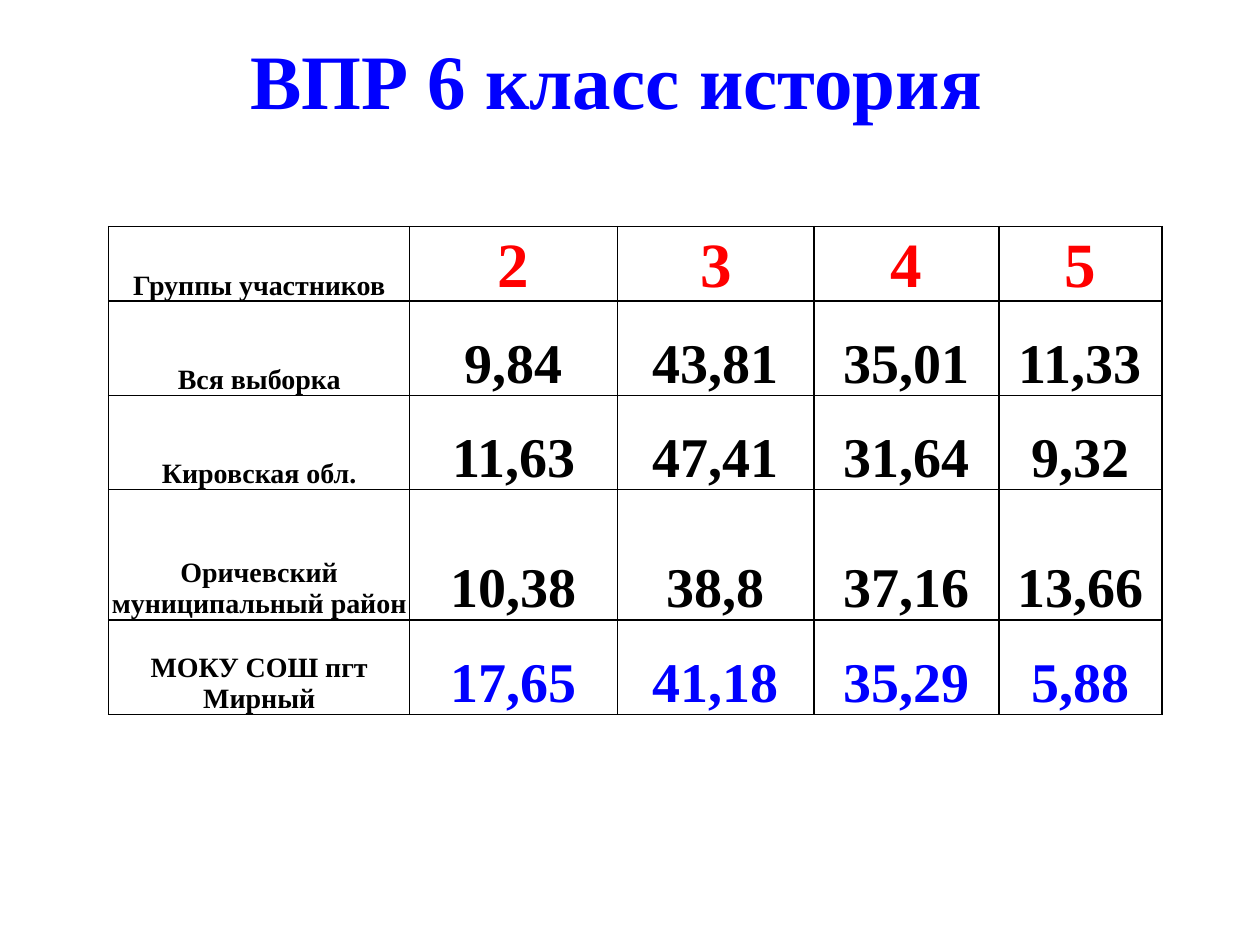
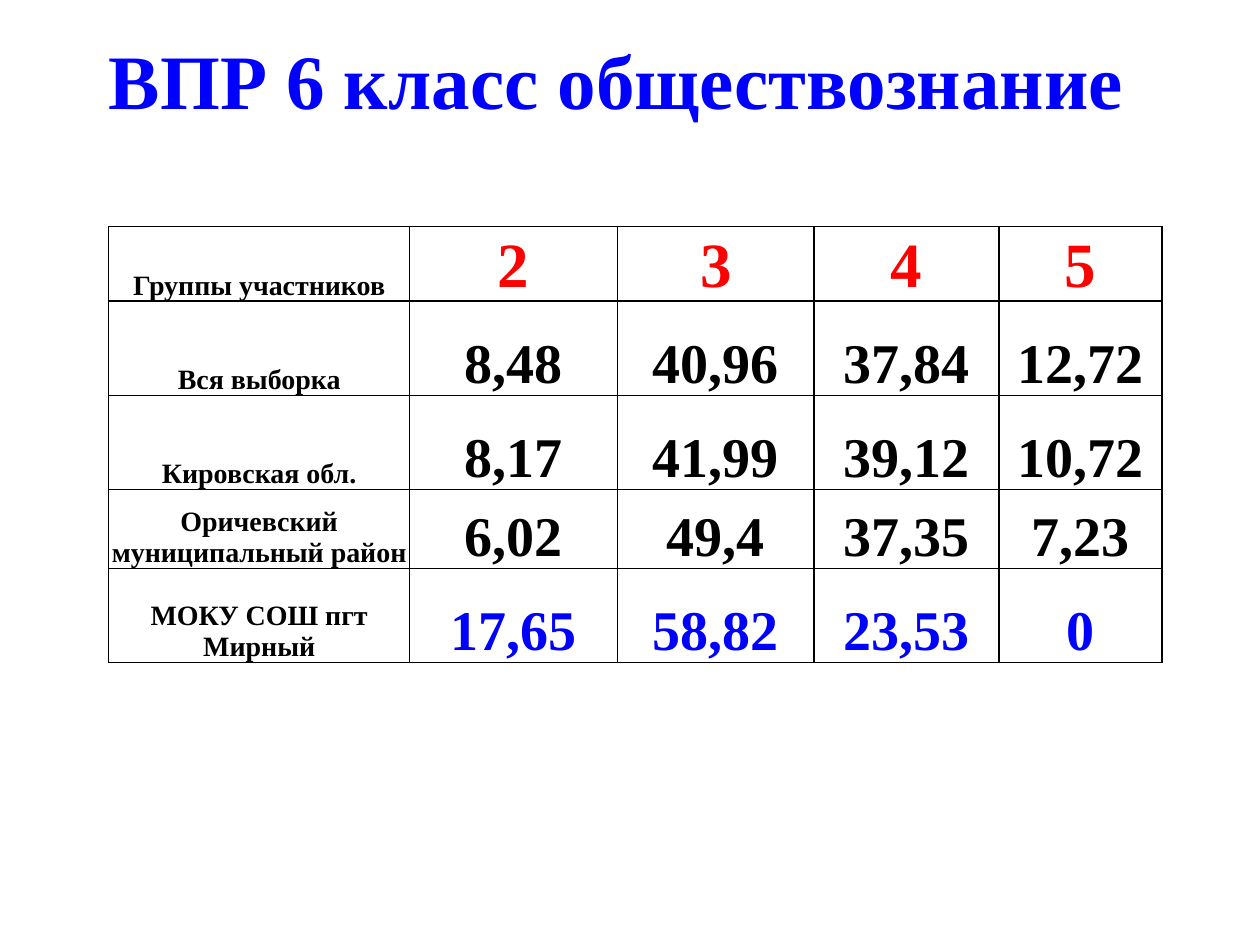
from lxml.etree import SubElement
from pptx import Presentation
from pptx.dml.color import RGBColor
from pptx.enum.text import MSO_ANCHOR, PP_ALIGN
from pptx.oxml.ns import qn
from pptx.util import Cm, Pt

FONT = "Times New Roman"
BLUE, RED, BLACK = "0000FF", "FF0000", "000000"
TITLE_SIZE, LABEL_SIZE, MARK_SIZE, VALUE_SIZE = 44, 16, 36, 32

COL_WIDTHS = [6.07, 4.19, 3.96, 3.73, 3.28]
HEADER_HEIGHT, ROW_HEIGHT = 1.5, 1.9
DISTRICT_ROW = 3
HEADER = ["Группы участников", "2", "3", "4", "5"]
GROUPS = ["Вся выборка", "Кировская обл.",
          "Оричевский муниципальный район", "МОКУ СОШ пгт Мирный"]

# Title, height of the district row, percentages by group
SUBJECTS = [
    ("ВПР 6 класс история", 2.63, [
        ["9,84", "43,81", "35,01", "11,33"],
        ["11,63", "47,41", "31,64", "9,32"],
        ["10,38", "38,8", "37,16", "13,66"],
        ["17,65", "41,18", "35,29", "5,88"],
    ]),
    ("ВПР 6 класс обществознание", 1.59, [
        ["8,48", "40,96", "37,84", "12,72"],
        ["8,17", "41,99", "39,12", "10,72"],
        ["6,02", "49,4", "37,35", "7,23"],
        ["17,65", "58,82", "23,53", "0"],
    ]),
]


def rgb(color):
    return RGBColor.from_string(color)


class Deck:
    """Holds the presentation, its text style and the current slide."""

    def __init__(self):
        self.prs = Presentation()
        self.prs.slide_width, self.prs.slide_height = Cm(25.4), Cm(19.05)
        self.s = None

    def add_slide(self, title):
        self.s = self.prs.slides.add_slide(self.prs.slide_layouts[5])
        sp = self.s.shapes.title
        sp.left, sp.top, sp.width, sp.height = Cm(1), Cm(0), Cm(22.86), Cm(3.18)
        tf = sp.text_frame
        tf.text = title
        tf.vertical_anchor = MSO_ANCHOR.MIDDLE
        self.style_text(tf, TITLE_SIZE, BLUE)

    def style_text(self, tf, size, color):
        for p in tf.paragraphs:
            p.alignment = PP_ALIGN.CENTER
            for r in p.runs:
                r.font.name, r.font.size, r.font.bold = FONT, Pt(size), True
                r.font.color.rgb = rgb(color)

    def add_borders(self, cell):
        tc_pr = cell._tc.get_or_add_tcPr()
        for side in ("lnL", "lnR", "lnT", "lnB"):
            ln = SubElement(tc_pr, qn(f"a:{side}"), w=str(Pt(1)))
            fill = SubElement(ln, qn("a:solidFill"))
            SubElement(fill, qn("a:srgbClr"), val=BLACK)

    def add_cell(self, cell, text, size, color):
        cell.margin_left = cell.margin_right = cell.margin_top = Cm(0.03)
        cell.margin_bottom = Cm(0)
        cell.vertical_anchor = MSO_ANCHOR.BOTTOM
        self.add_borders(cell)
        cell.fill.background()
        cell.text_frame.text = text
        self.style_text(cell.text_frame, size, color)

    def add_table(self, rows, heights):
        table = self.s.shapes.add_table(
            len(rows), len(COL_WIDTHS), Cm(2.19), Cm(4.57),
            Cm(sum(COL_WIDTHS)), Cm(sum(heights))).table
        table.first_row = table.horz_banding = False
        for column, width in zip(table.columns, COL_WIDTHS):
            column.width = Cm(width)
        for i, (row, height) in enumerate(zip(rows, heights)):
            table.rows[i].height = Cm(height)
            for j, text in enumerate(row):
                if j == 0:
                    size, color = LABEL_SIZE, BLACK
                elif i == 0:
                    size, color = MARK_SIZE, RED
                else:
                    size = VALUE_SIZE
                    color = BLUE if i == len(rows) - 1 else BLACK
                self.add_cell(table.cell(i, j), text, size, color)


def main():
    deck = Deck()
    for title, district_height, results in SUBJECTS:
        deck.add_slide(title)
        rows = [HEADER] + [[group, *values] for group, values in zip(GROUPS, results)]
        heights = [HEADER_HEIGHT] + [ROW_HEIGHT] * len(GROUPS)
        heights[DISTRICT_ROW] = district_height
        deck.add_table(rows, heights)
    deck.prs.save("out.pptx")


if __name__ == "__main__":
    main()
